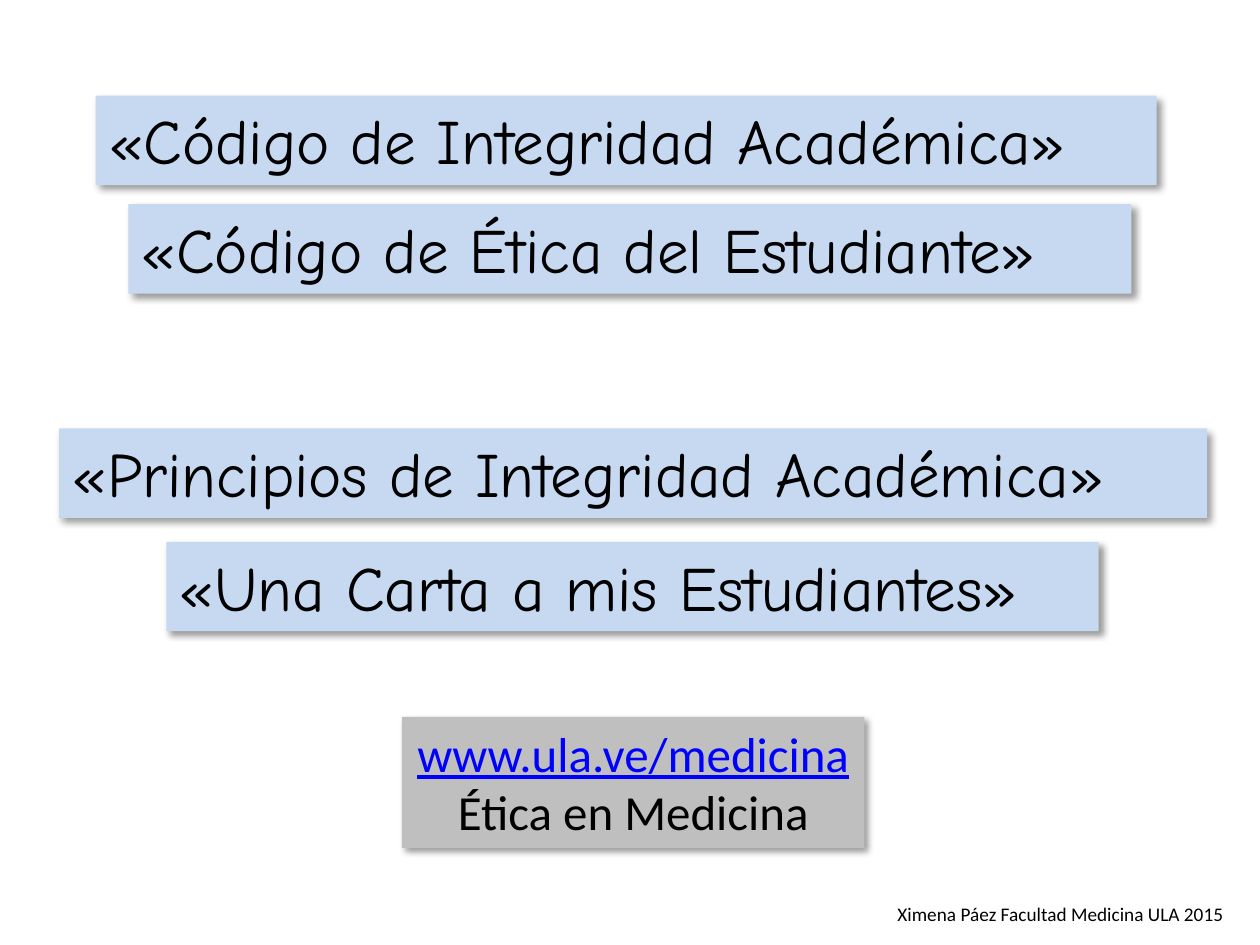
from dataclasses import dataclass

from lxml.etree import SubElement
from pptx import Presentation
from pptx.dml.color import RGBColor
from pptx.enum.text import MSO_AUTO_SIZE as AutoSize, PP_ALIGN as Align
from pptx.oxml.ns import qn
from pptx.util import Inches, Pt

BLACK, LINK_BLUE, PALE_BLUE, GREY = "000000", "0000FF", "C6D9F1", "BFBFBF"


@dataclass
class Banner:
    text: str
    left: float
    top: float
    width: float


BANNERS = [
    Banner("«Código de Integridad Académica»", 0.76, 0.76, 8.42),
    Banner("«Código de Ética del Estudiante»", 1.02, 1.62, 7.96),
    Banner("«Principios de Integridad Académica»", 0.47, 3.4, 9.11),
    Banner("«Una Carta a mis Estudiantes»", 1.32, 4.3, 7.4),
]
BANNER_HEIGHT = 0.71


def color(value: str) -> RGBColor:
    return RGBColor.from_string(value)


def add_box(page, left: float, top: float, width: float, height: float):
    box = page.shapes.add_textbox(
        Inches(left), Inches(top), Inches(width), Inches(height))
    box.text_frame.word_wrap = False
    box.text_frame.auto_size = AutoSize.SHAPE_TO_FIT_TEXT
    return box


def add_panel(page, left: float, top: float, width: float, height: float,
              fill: str):
    """Add a filled text box with a soft shadow to the lower right."""
    box = add_box(page, left, top, width, height)
    box.fill.solid()
    box.fill.fore_color.rgb = color(fill)
    effects = SubElement(box.fill._xPr, qn("a:effectLst"))
    shadow = SubElement(effects, qn("a:outerShdw"), blurRad=str(Pt(4)),
                        dist=str(Pt(3)), dir=str(45 * 60000),
                        algn="tl", rotWithShape="0")
    tint = SubElement(shadow, qn("a:srgbClr"), val=BLACK)
    SubElement(tint, qn("a:alpha"), val="40000")
    return box


def write(para, text: str, *, size: float, font: str = "Calibri",
          ink: str = BLACK, align: Align = Align.LEFT,
          underline: bool = False) -> None:
    para.alignment = align
    span = para.add_run()
    span.text = text
    span.font.name = font
    span.font.size = Pt(size)
    span.font.color.rgb = color(ink)
    span.font.underline = underline


def main() -> None:
    deck = Presentation()
    deck.slide_width, deck.slide_height = Inches(10), Inches(7.5)
    page = deck.slides.add_slide(deck.slide_layouts[6])

    # Document titles
    for banner in BANNERS:
        box = add_panel(page, banner.left, banner.top, banner.width,
                        BANNER_HEIGHT, PALE_BLUE)
        write(box.text_frame.paragraphs[0], banner.text,
              size=36, font="Comic Neue")

    # Web address
    frame = add_panel(page, 3.19, 5.69, 3.67, 1.04, GREY).text_frame
    write(frame.paragraphs[0], "www.ula.ve/medicina", size=28,
          ink=LINK_BLUE, align=Align.CENTER, underline=True)
    write(frame.add_paragraph(), "Ética en Medicina", size=28,
          align=Align.CENTER)

    # Author line
    author = add_box(page, 7, 7.11, 2.81, 0.29)
    write(author.text_frame.paragraphs[0],
          "Ximena Páez Facultad Medicina ULA 2015", size=11,
          align=Align.RIGHT)

    deck.save("out.pptx")


if __name__ == "__main__":
    main()
